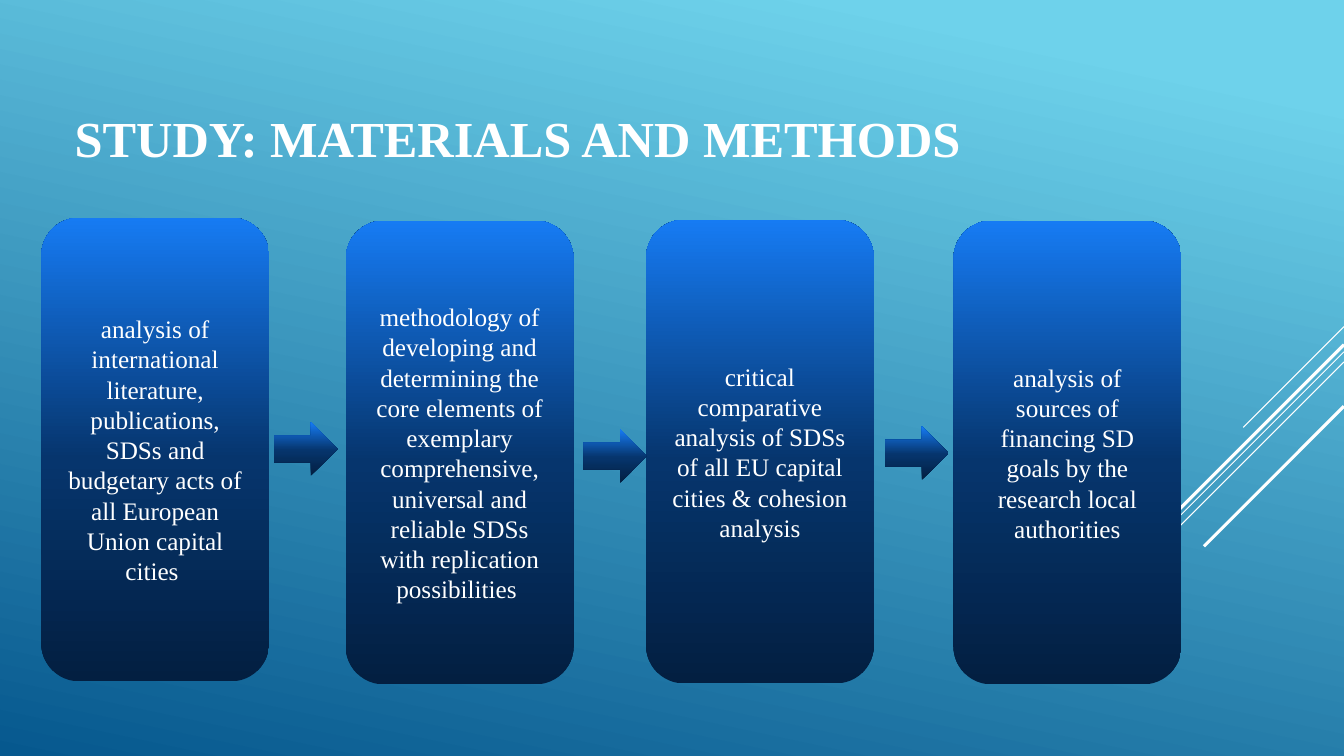
from copy import deepcopy
from dataclasses import dataclass

from lxml.etree import SubElement
from pptx import Presentation
from pptx.dml.color import RGBColor
from pptx.dml.fill import FillFormat
from pptx.enum.shapes import MSO_CONNECTOR, MSO_SHAPE
from pptx.enum.text import MSO_ANCHOR, PP_ALIGN
from pptx.oxml.ns import qn
from pptx.slide import Slide
from pptx.text.text import TextFrame
from pptx.util import Pt

Stops = tuple[tuple[float, str], ...]


@dataclass(frozen=True)
class Theme:
    font: str = "Times New Roman"
    white: str = "FFFFFF"
    head: float = 36
    body: float = 18
    sky: Stops = ((0.1, "6ED2EB"), (1, "06588E"))
    navy: Stops = ((0, "031F41"), (0.48, "06356D"), (1, "167BF3"))


@dataclass(frozen=True)
class Ray:
    top: float
    run: float
    width: float


@dataclass(frozen=True)
class Card:
    left: float
    top: float
    text: str


@dataclass(frozen=True)
class Arrow:
    left: float
    top: float


THEME = Theme()
WIDE, HIGH = 960, 540
CARD_W, CARD_H = 162.7, 331.2
ARROW_W, ARROW_H = 45.4, 38.2

RAYS = (
    Ray(233.3, 72, 0.75),
    Ray(251.3, 234.7, 0.75),
    Ray(258.5, 149, 0.75),
    Ray(246.2, 137.5, 2.25),
    Ray(290.2, 100, 2.25),
)
CARDS = (
    Card(29.5, 155.5, "analysis of international literature, publications, SDSs and "
         "budgetary acts of all European Union capital cities "),
    Card(247, 157.7, "methodology of developing and determining the core elements of "
         "exemplary comprehensive, universal and reliable SDSs with replication "
         "possibilities "),
    Card(461.5, 157, "critical comparative analysis of SDSs of all EU capital cities "
         "& cohesion analysis"),
    Card(681.1, 157.7, "analysis of sources of financing SD goals by the research local "
         "authorities"),
)
ARROWS = (Arrow(195.8, 301.7), Arrow(416.7, 306.7), Arrow(632.2, 304.6))


def shade(fill: FillFormat, root, stops: Stops, angle: float) -> None:
    fill.gradient()
    fill.gradient_angle = angle
    group = next(root.iter(qn("a:gsLst")))
    while len(group) < len(stops):
        group.append(deepcopy(group[-1]))
    for stop, (place, tint) in zip(fill.gradient_stops, stops):
        stop.position = place
        stop.color.rgb = RGBColor.from_string(tint)


def write(frame: TextFrame, text: str, size: float, align: PP_ALIGN, bold: bool) -> None:
    frame.text = text
    frame.word_wrap = True
    frame.vertical_anchor = MSO_ANCHOR.MIDDLE
    para = frame.paragraphs[0]
    para.alignment = align
    para.font.name = THEME.font
    para.font.size = Pt(size)
    para.font.bold = bold
    para.font.color.rgb = RGBColor.from_string(THEME.white)


def draw_ray(slide: Slide, ray: Ray) -> None:
    line = slide.shapes.add_connector(
        MSO_CONNECTOR.STRAIGHT,
        Pt(WIDE), Pt(ray.top), Pt(WIDE - ray.run), Pt(ray.top + ray.run))
    line.line.width = Pt(ray.width)
    line.line.color.rgb = RGBColor.from_string(THEME.white)
    SubElement(line._element.spPr, qn("a:effectLst"))


def draw_block(slide: Slide, kind: MSO_SHAPE, left: float, top: float,
               width: float, height: float) -> TextFrame:
    block = slide.shapes.add_shape(kind, Pt(left), Pt(top), Pt(width), Pt(height))
    block.shadow.inherit = False
    block.line.fill.background()
    shade(block.fill, block._element, THEME.navy, 90)
    return block.text_frame


def draw_card(slide: Slide, card: Card) -> None:
    frame = draw_block(slide, MSO_SHAPE.ROUNDED_RECTANGLE,
                       card.left, card.top, CARD_W, CARD_H)
    write(frame, card.text, THEME.body, PP_ALIGN.CENTER, False)


def draw_title(slide: Slide) -> None:
    title = slide.shapes.title
    title.left, title.top = Pt(46.1), Pt(38.9)
    title.width, title.height = Pt(671.8), Pt(118.8)
    write(title.text_frame, "STUDY: MATERIALS AND METHODS", THEME.head,
          PP_ALIGN.LEFT, True)


def main() -> None:
    deck = Presentation()
    deck.slide_width, deck.slide_height = Pt(WIDE), Pt(HIGH)
    slide = deck.slides.add_slide(deck.slide_layouts[5])
    shade(slide.background.fill, slide.element, THEME.sky, 258)
    draw_title(slide)
    for ray in RAYS:
        draw_ray(slide, ray)
    for card in CARDS:
        draw_card(slide, card)
    for arrow in ARROWS:
        draw_block(slide, MSO_SHAPE.RIGHT_ARROW, arrow.left, arrow.top,
                   ARROW_W, ARROW_H)
    deck.save("out.pptx")


if __name__ == "__main__":
    main()
